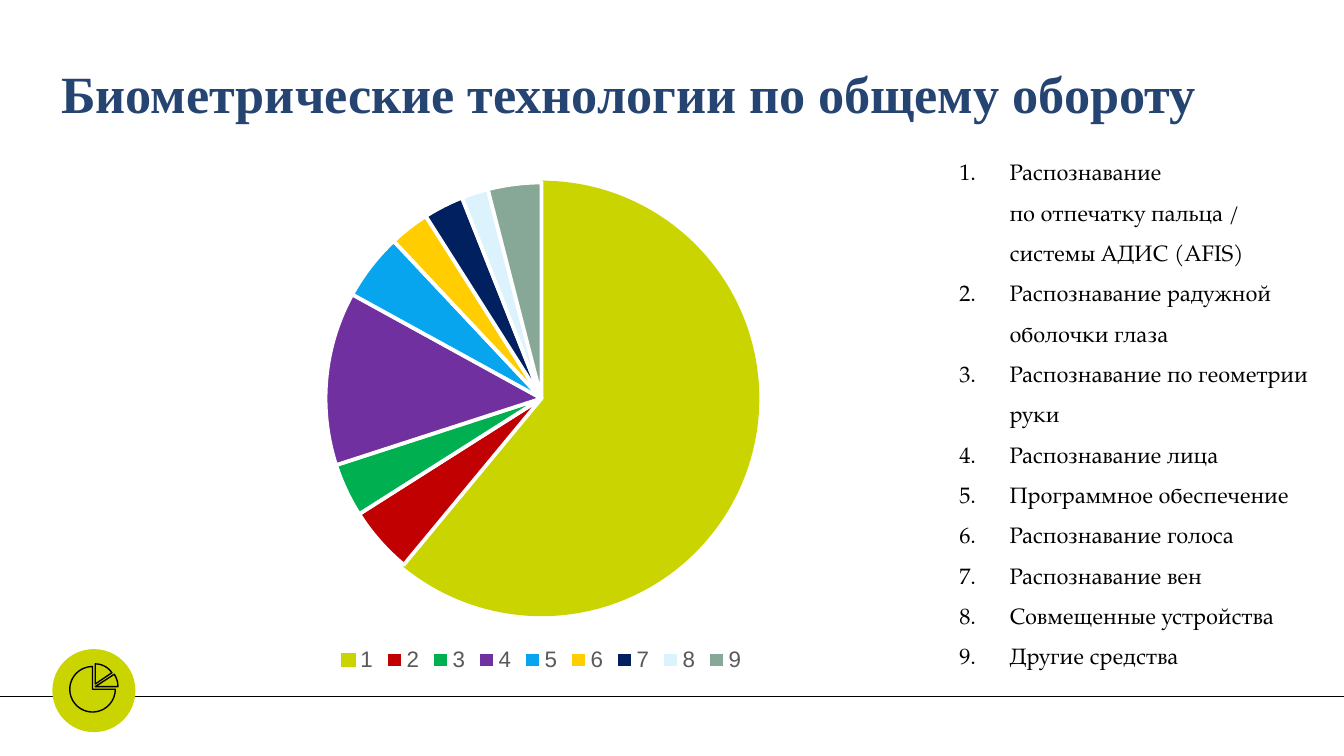
from math import cos, radians, sin

from lxml import etree
from pptx import Presentation
from pptx.chart.data import CategoryChartData
from pptx.dml.color import RGBColor
from pptx.enum.chart import XL_CHART_TYPE, XL_LEGEND_POSITION
from pptx.enum.shapes import MSO_CONNECTOR, MSO_SHAPE
from pptx.enum.text import MSO_ANCHOR, MSO_AUTO_SIZE
from pptx.oxml.ns import qn
from pptx.util import Cm, Pt

PIE = XL_CHART_TYPE.PIE
BELOW = XL_LEGEND_POSITION.BOTTOM
STRAIGHT = MSO_CONNECTOR.STRAIGHT
OVAL = MSO_SHAPE.OVAL
BOTTOM = MSO_ANCHOR.BOTTOM
GROW = MSO_AUTO_SIZE.SHAPE_TO_FIT_TEXT

WIDE, HIGH = 25.4, 14.29
BLACK, WHITE, LIME = "000000", "FFFFFF", "CAD401"

SHARES = [
    (61, LIME), (5, "C00001"), (4, "00B050"),
    (13, "7030A0"), (5, "08A5EF"), (3, "FFCD00"),
    (3, "002060"), (2, "DCF3FE"), (4, "87A896"),
]
ITEMS = [
    "Распознавание\vпо отпечатку пальца / системы АДИС (AFIS)",
    "Распознавание радужной оболочки глаза",
    "Распознавание по геометрии руки",
    "Распознавание лица",
    "Программное обеспечение",
    "Распознавание голоса",
    "Распознавание вен",
    "Совмещенные устройства",
    "Другие средства",
]
WEDGES = [
    (1.75, 13.03, 0.43, 0, 270),
    (1.8, 12.93, 0.38, 270, 326),
    (1.8, 12.98, 0.43, 327, 360),
]


def paint(color):
    return RGBColor.from_string(color)


def place(*box):
    return [Cm(side) for side in box]


class Deck:
    title_font = "Times New Roman"
    list_font = "TeX Gyre Pagella"
    chart_font = "Arial"
    stroke = Pt(0.75)

    def __init__(self):
        self.show = Presentation()
        self.show.slide_width = Cm(WIDE)
        self.show.slide_height = Cm(HIGH)
        self.slide = self.show.slides.add_slide(self.show.slide_layouts[6])
        self.shapes = self.slide.shapes

    def style(self, font, name, size, color, bold=False):
        font.name, font.size, font.bold = name, Pt(size), bold
        font.color.rgb = paint(color)

    def edge(self, line, color, width):
        line.color.rgb = paint(color)
        line.width = width

    def rule(self, y):
        line = self.shapes.add_connector(STRAIGHT, *place(0, y, WIDE, y))
        self.edge(line.line, BLACK, self.stroke)
        etree.SubElement(line._element.spPr, qn("a:effectLst"))

    def disc(self, box, color):
        disc = self.shapes.add_shape(OVAL, *place(*box))
        disc.shadow.inherit = False
        disc.fill.solid()
        disc.fill.fore_color.rgb = paint(color)
        disc.line.fill.background()

    def wedge(self, x, y, radius, start, end):
        steps = max(8, (end - start) // 6)
        turns = [radians(start + (end - start) * i / steps)
                 for i in range(steps + 1)]
        pen = self.shapes.build_freeform(*place(x, y))
        pen.add_line_segments(
            [place(x + radius * cos(a), y + radius * sin(a)) for a in turns],
            close=True)
        shape = pen.convert_to_shape()
        shape.shadow.inherit = False
        shape.fill.background()
        self.edge(shape.line, BLACK, self.stroke)

    def frame(self, box):
        frame = self.shapes.add_textbox(*place(*box)).text_frame
        frame.word_wrap = True
        return frame

    def title(self, box, text):
        frame = self.frame(box)
        frame.vertical_anchor = BOTTOM
        frame.margin_left = frame.margin_right = Cm(0.25)
        frame.margin_top = frame.margin_bottom = Cm(0.25)
        para = frame.paragraphs[0]
        para.text = text
        self.style(para.font, self.title_font, 28, "264471", True)

    def numbers(self, box, items, indent):
        frame = self.frame(box)
        frame.auto_size = GROW
        for i, item in enumerate(items):
            para = frame.add_paragraph() if i else frame.paragraphs[0]
            para.text = item
            para.line_spacing = 1.5
            self.style(para.font, self.list_font, 12, BLACK)
            props = para._p.get_or_add_pPr()
            props.set("marL", str(Cm(indent)))
            props.set("indent", str(-Cm(indent)))
            mark = props.makeelement(
                qn("a:buAutoNum"), {"type": "arabicPeriod"})
            props.find(qn("a:lnSpc")).addnext(mark)

    def pie(self, box, shares):
        data = CategoryChartData()
        data.categories = [str(i + 1) for i in range(len(shares))]
        data.add_series("Series 1", [value for value, _ in shares])
        chart = self.shapes.add_chart(PIE, *place(*box), data).chart
        chart.has_title = False
        self.style(chart.font, self.chart_font, 10, BLACK)
        chart.has_legend = True
        chart.legend.position = BELOW
        chart.legend.include_in_layout = False
        self.style(chart.legend.font, self.chart_font, 12, "595959")
        plot = chart.plots[0]
        plot.vary_by_categories = True
        for i, (_, color) in enumerate(shares):
            look = plot.series[0].points[i].format
            look.fill.solid()
            look.fill.fore_color.rgb = paint(color)
            self.edge(look.line, WHITE if i else color, Pt(2))


def main():
    deck = Deck()
    deck.rule(13.16)
    deck.disc((0.99, 12.27, 1.57, 1.57), LIME)
    deck.title((0.91, 0.89, 23.62, 1.7),
               "Биометрические технологии по общему обороту")
    for wedge in WEDGES:
        deck.wedge(*wedge)
    deck.pie((2.59, 3.1, 15.29, 9.7), SHARES)
    deck.numbers((17.88, 2.62, 7.16, 10.85), ITEMS, 0.95)
    deck.show.save("out.pptx")


if __name__ == "__main__":
    main()
